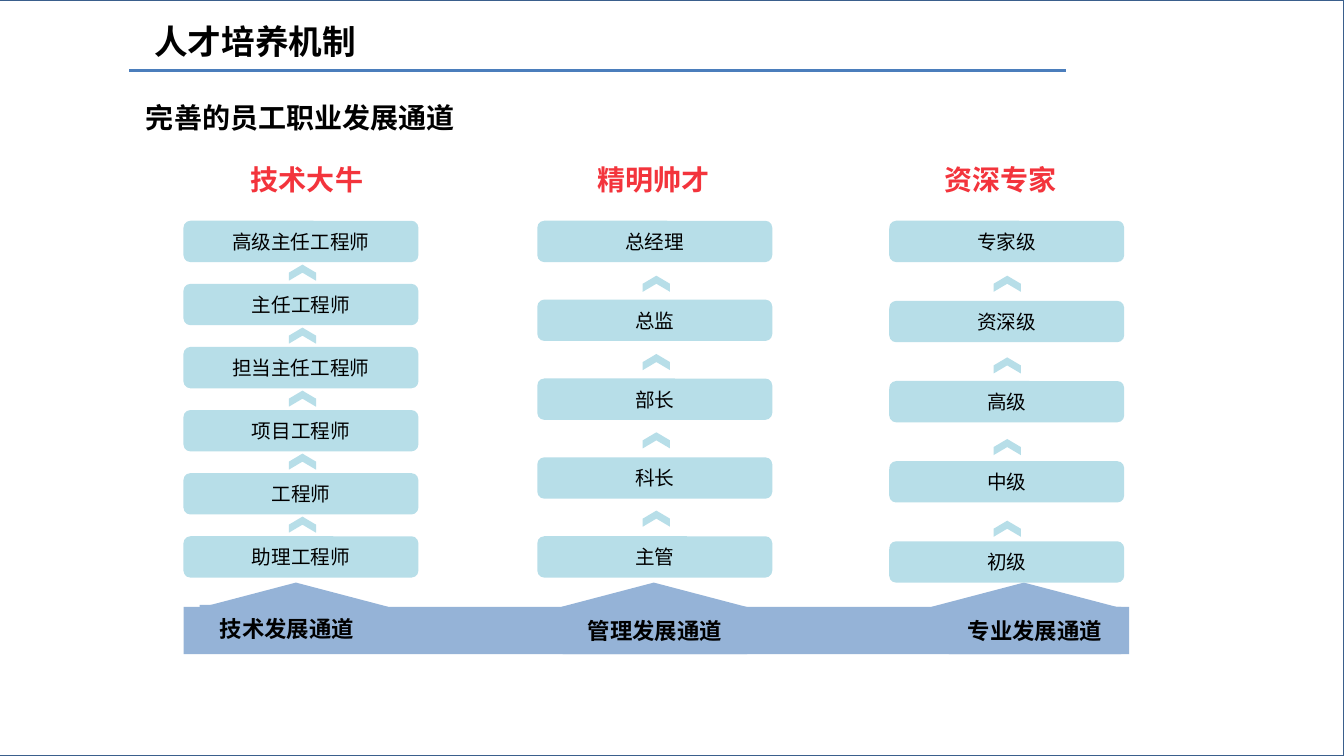
from dataclasses import dataclass

from lxml.etree import SubElement
from pptx import Presentation
from pptx.dml.color import RGBColor
from pptx.enum.shapes import MSO_CONNECTOR as Connector, MSO_SHAPE as Preset
from pptx.enum.text import MSO_ANCHOR as Anchor, PP_ALIGN as Align
from pptx.oxml.ns import qn
from pptx.util import Inches, Pt

FONT = "Noto Sans CJK SC"
COLORS = {
    "white": "FFFFFF", "black": "000000", "frame": "3A5F8C", "rule": "4B7EBC",
    "band": "95B3D7", "level": "B7DEE8", "heading": "F3343C",
}
LEVEL_TOP, LEVEL_WIDTH, LEVEL_HEIGHT = 2.19, 2.33, 0.41
CHEVRON_WIDTH, CHEVRON_HEIGHT = 0.16, 0.27


@dataclass
class Box:
    """A rectangle in inches."""
    left: float
    top: float
    width: float
    height: float

    def lengths(self) -> list:
        return [Inches(value) for value in (self.left, self.top, self.width, self.height)]


@dataclass
class Channel:
    """A career channel with its levels from top to bottom."""
    heading: str
    heading_left: float
    levels: list[str]
    level_left: float
    level_bottom: float
    chevron_left: float
    first_chevron: float
    last_chevron: float
    label: str
    label_box: Box
    roof_left: float


CHANNELS = [
    Channel("技术大牛", 2.29,
            ["高级主任工程师", "主任工程师", "担当主任工程师", "项目工程师", "工程师", "助理工程师"],
            1.82, 5.32, 2.92, 2.57, 5.07, "技术发展通道", Box(1.98, 6, 1.73, 0.47), 2.02),
    Channel("精明帅才", 5.73, ["总经理", "总监", "部长", "科长", "主管"],
            5.33, 5.32, 6.43, 2.68, 5.01, "管理发展通道", Box(5.58, 6.02, 1.83, 0.47), 5.57),
    Channel("资深专家", 9.17, ["专家级", "资深级", "高级", "中级", "初级"],
            8.82, 5.37, 9.91, 2.68, 5.11, "专业发展通道", Box(9.41, 6.02, 1.71, 0.47), 9.24),
]


def color(name: str) -> RGBColor:
    """Return a named colour."""
    return RGBColor.from_string(COLORS[name])


def write(shape, text: str, *, size: int, bold: bool = False, ink: str = "black",
          align: Align = Align.CENTER, anchor: Anchor = Anchor.MIDDLE) -> None:
    """Write one formatted line of text in a shape."""
    frame = shape.text_frame
    frame.word_wrap = True
    frame.vertical_anchor = anchor
    paragraph = frame.paragraphs[0]
    paragraph.alignment = align
    run = paragraph.add_run()
    run.text = text
    run.font.size, run.font.bold, run.font.name = Pt(size), bold, FONT
    run.font.color.rgb = color(ink)
    SubElement(run._r.get_or_add_rPr(), qn("a:ea"), typeface=FONT)


def add_preset(slide, preset: Preset, box: Box, fill: str):
    """Add a filled preset shape without outline or shadow."""
    shape = slide.shapes.add_shape(preset, *box.lengths())
    shape.shadow.inherit = False
    shape.fill.solid()
    shape.fill.fore_color.rgb = color(fill)
    shape.line.fill.background()
    return shape


def add_frame(slide) -> None:
    """Add the page frame, the title on top of it, its rule and the subtitle."""
    frame = add_preset(slide, Preset.RECTANGLE, Box(-0.02, 0, 13.35, 7.5), "white")
    frame.line.color.rgb = color("frame")
    frame.line.width = Pt(2)
    rule = slide.shapes.add_connector(
        Connector.STRAIGHT, Inches(1.28), Inches(0.7), Inches(10.57), Inches(0.7))
    rule.line.color.rgb = color("rule")
    rule.line.width = Pt(2)
    SubElement(rule._element.spPr, qn("a:effectLst"))
    title = slide.shapes.title
    title.left, title.top, title.width, title.height = Box(1.43, 0.16, 2.42, 0.5).lengths()
    write(title, "人才培养机制", size=24, bold=True, align=Align.LEFT)
    frame._element.addnext(title._element)
    subtitle = slide.shapes.add_textbox(*Box(1.35, 0.94, 4.77, 0.44).lengths())
    write(subtitle, "完善的员工职业发展通道", size=20, bold=True, align=Align.LEFT)


def add_channel(slide, channel: Channel) -> None:
    """Add the base, levels, chevrons and heading of a channel."""
    label = add_preset(slide, Preset.RECTANGLE, channel.label_box, "band")
    write(label, channel.label, size=16, bold=True)
    add_preset(slide, Preset.ISOSCELES_TRIANGLE, Box(channel.roof_left, 5.78, 1.83, 0.24), "band")

    gaps = len(channel.levels) - 1
    pitch = (channel.level_bottom - LEVEL_TOP) / gaps
    for index, name in enumerate(channel.levels):
        box = Box(channel.level_left, LEVEL_TOP + index * pitch, LEVEL_WIDTH, LEVEL_HEIGHT)
        write(add_preset(slide, Preset.ROUNDED_RECTANGLE, box, "level"), name, size=14)

    chevron_pitch = (channel.last_chevron - channel.first_chevron) / (gaps - 1)
    for index in range(gaps):
        top = channel.first_chevron + index * chevron_pitch
        box = Box(channel.chevron_left, top, CHEVRON_WIDTH, CHEVRON_HEIGHT)
        add_preset(slide, Preset.CHEVRON, box, "level").rotation = 270

    heading = slide.shapes.add_textbox(*Box(channel.heading_left, 1.56, 1.51, 0.44).lengths())
    write(heading, channel.heading, size=20, bold=True, ink="heading", anchor=Anchor.TOP)


def main() -> None:
    """Build and save the career channel slide."""
    presentation = Presentation()
    presentation.slide_width, presentation.slide_height = Inches(13.33), Inches(7.5)
    slide = presentation.slides.add_slide(presentation.slide_layouts[5])
    add_frame(slide)
    add_preset(slide, Preset.RECTANGLE, Box(1.82, 6.02, 9.38, 0.47), "band")
    for channel in CHANNELS:
        add_channel(slide, channel)
    presentation.save("out.pptx")


if __name__ == "__main__":
    main()
